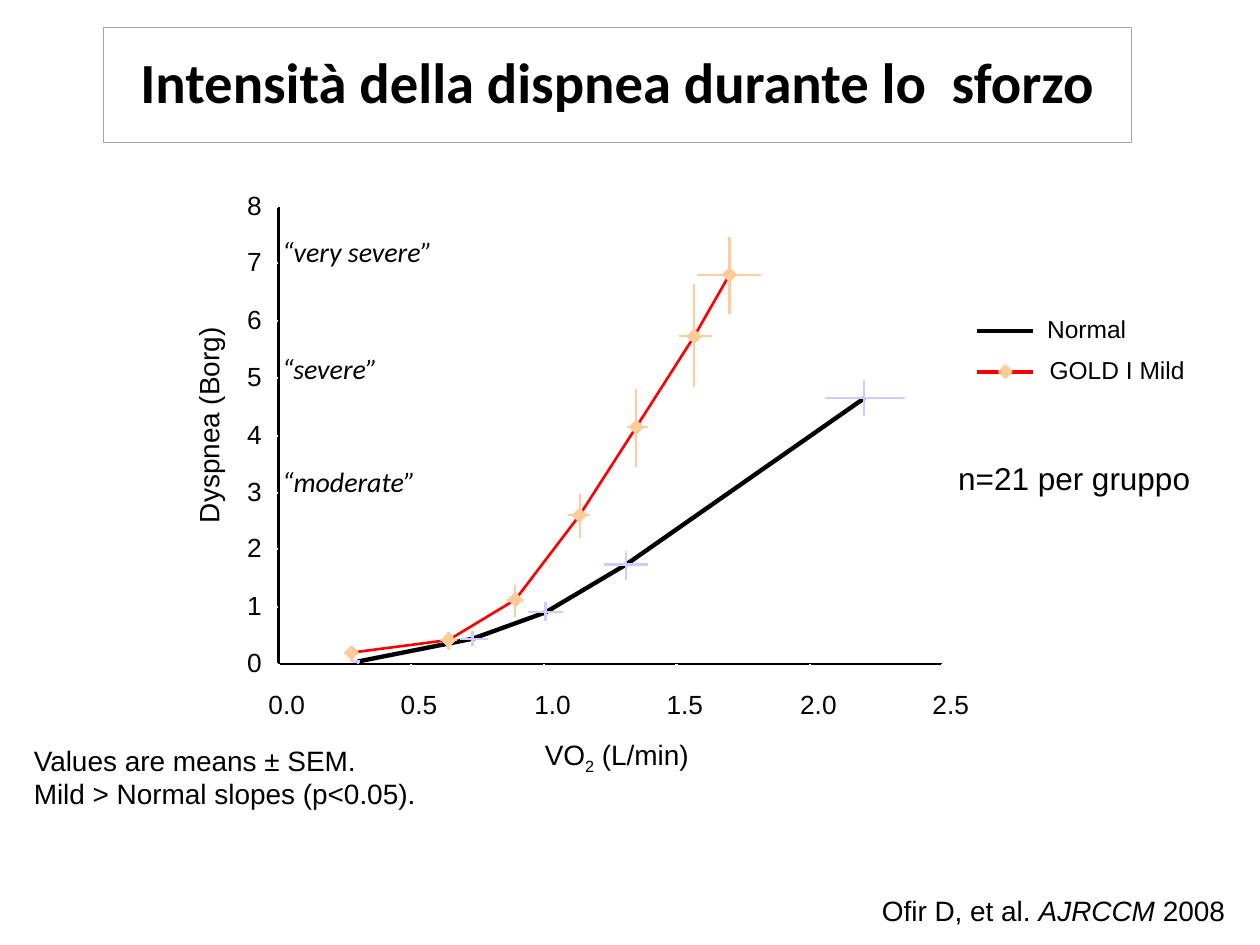
from lxml.etree import SubElement
from pptx import Presentation
from pptx.dml.color import RGBColor
from pptx.enum.shapes import MSO_CONNECTOR, MSO_SHAPE
from pptx.enum.text import MSO_ANCHOR, MSO_AUTO_SIZE, PP_ALIGN
from pptx.oxml.ns import qn
from pptx.util import Pt

PX = 9144  # EMU
BLACK = RGBColor(0x00, 0x00, 0x00)
WHITE = RGBColor(0xFF, 0xFF, 0xFF)
GREY = RGBColor(0xA6, 0xA6, 0xA6)
RED = RGBColor(0xFF, 0x00, 0x00)
PEACH = RGBColor(0xFF, 0xCC, 0x99)
LILAC = RGBColor(0xCC, 0xCC, 0xFF)

X0, Y0, X_END, Y_END = 221, 527, 748, 164
X_STEP, Y_STEP = (X_END - X0) / 5, (Y0 - Y_END) / 8

# x, y and the arms of the error bars: right, left, up, down
NORMAL = [
    (284, 525, 2, 4, 0, 2),
    (375, 507, 12, 10, 6, 6),
    (433, 486, 14, 14, 8, 7),
    (497, 448, 17, 18, 11, 12),
    (686, 316, 32, 31, 14, 14),
]
MILD = [
    (279, 518, 3, 6, 5, 7),
    (356, 508, 7, 7, 6, 8),
    (409, 476, 7, 7, 12, 14),
    (460, 409, 8, 9, 17, 18),
    (505, 339, 9, 7, 30, 32),
    (551, 267, 14, 12, 42, 40),
    (579, 218, 25, 26, 30, 31),
]


def add_run(p, text, font="Arial", size=16, color=BLACK, bold=False, italic=False, baseline=0):
    """Append a formatted run to a paragraph."""
    r = p.add_run()
    r.text = text
    f = r.font
    f.name, f.size, f.bold, f.italic = font, Pt(size), bold, italic
    f.color.rgb = color
    if baseline:
        r._r.get_or_add_rPr().set("baseline", str(baseline * 1000))


class Drawing:
    """Holds the line style and the current slide, and draws each kind of element."""

    def __init__(self, s, width=1.25):
        self.s = s
        self.width = width

    def title(self, text, x, y, w, h):
        sp = self.s.shapes.title
        sp.left, sp.top, sp.width, sp.height = (v * PX for v in (x, y, w, h))
        sp.line.color.rgb, sp.line.width = GREY, Pt(0.75)
        tf = sp.text_frame
        tf.auto_size, tf.vertical_anchor = MSO_AUTO_SIZE.NONE, MSO_ANCHOR.MIDDLE
        p = tf.paragraphs[0]
        p.alignment, p.line_spacing = PP_ALIGN.CENTER, 0.9
        add_run(p, text, font="Calibri", size=32.4, bold=True)

    def text(self, x, y, w, h, *paragraphs, align=PP_ALIGN.LEFT, rotation=0, tight=False, **fmt):
        sp = self.s.shapes.add_textbox(x * PX, y * PX, w * PX, h * PX)
        sp.rotation = rotation
        tf = sp.text_frame
        tf.word_wrap = not tight
        tf.auto_size = MSO_AUTO_SIZE.SHAPE_TO_FIT_TEXT
        if tight:
            tf.margin_left = tf.margin_right = tf.margin_top = tf.margin_bottom = 0
        for i, runs in enumerate(paragraphs):
            p = tf.add_paragraph() if i else tf.paragraphs[0]
            p.alignment = align
            for text, extra in [(runs, {})] if isinstance(runs, str) else runs:
                add_run(p, text, **{**fmt, **extra})

    def label(self, x, y, w, h, *paragraphs, align=PP_ALIGN.CENTER, **fmt):
        self.text(x, y, w, h, *paragraphs, align=align, tight=True, **fmt)

    def line(self, x1, y1, x2, y2, color, width=None):
        c = self.s.shapes.add_connector(MSO_CONNECTOR.STRAIGHT, x1 * PX, y1 * PX, x2 * PX, y2 * PX)
        c.line.color.rgb, c.line.width = color, Pt(width or self.width)
        SubElement(c._element.spPr, qn("a:effectLst"))

    def polyline(self, points, color, width):
        fb = self.s.shapes.build_freeform(*points[0], scale=PX)
        fb.add_line_segments(points[1:], close=False)
        sp = fb.convert_to_shape()
        sp.shadow.inherit = False
        sp.fill.background()
        sp.line.color.rgb, sp.line.width = color, Pt(width)

    def marker(self, x, y, color, r=5):
        sp = self.s.shapes.add_shape(
            MSO_SHAPE.DIAMOND, (x - r) * PX, (y - r) * PX, 2 * r * PX, 2 * r * PX)
        sp.shadow.inherit = False
        sp.fill.solid()
        sp.fill.fore_color.rgb = sp.line.color.rgb = color
        sp.line.width = Pt(self.width)

    def series(self, data, color, width, bar_color, markers=False):
        self.polyline([row[:2] for row in data], color, width)
        for x, y, right, left, up, down in data:
            for dx, dy in ((right, 0), (-left, 0), (0, -up), (0, down)):
                if dx or dy:
                    self.line(x, y, x + dx, y + dy, bar_color)
        if markers:
            for x, y, *_ in data:
                self.marker(x, y, bar_color)

    def axes(self):
        self.line(X0, Y_END, X0, Y0, BLACK)
        for i in range(9):
            y = round(Y0 - i * Y_STEP)
            self.line(X0 - 7, y, X0, y, WHITE)
            self.label(196, y - 14, 12, 25, str(i), size=15)
        self.line(X0, Y0, X_END, Y0, BLACK)
        for i in range(6):
            x = round(X0 + i * X_STEP)
            self.line(x, Y0 + 7, x, Y0, WHITE)
            self.label(x - 8, 546, 29, 25, f"{i / 2:.1f}", size=15)


def main():
    prs = Presentation()
    prs.slide_width, prs.slide_height = 1000 * PX, 750 * PX
    d = Drawing(prs.slides.add_slide(prs.slide_layouts[5]))

    d.title("Intensità della dispnea durante lo  sforzo", 82, 22, 816, 91)
    d.text(17, 585, 356, 64, "Values are means ± SEM.", "Mild > Normal slopes (p<0.05).")
    for y, grade in ((181, "“very severe”"), (274, "“severe”"), (364, "“moderate”")):
        d.text(214, y, 159, 37, grade, font="Calibri", italic=True)

    d.axes()
    d.series(NORMAL, BLACK, 2.5, LILAC)
    d.series(MILD, RED, 1.5, PEACH, markers=True)
    d.label(429, 585, 121, 27, [("VO", {}), ("2", {"baseline": -25}), (" (L/min)", {})])
    d.label(87, 324, 157, 27, "Dyspnea (Borg)", rotation=270)

    d.line(775, 263, 820, 263, BLACK, 2.38)
    d.label(831, 249, 63, 24, "Normal", size=14)
    d.line(775, 295, 820, 295, RED, 2.38)
    d.marker(798, 295, PEACH)
    d.label(833, 282, 108, 24, "GOLD I Mild", size=14, align=PP_ALIGN.LEFT)

    d.text(747, 359, 211, 40, "n=21 per gruppo", size=18, align=PP_ALIGN.CENTER)
    d.text(444, 704, 538, 37,
           [("Ofir D, et al. ", {}), ("AJRCCM", {"italic": True}), (" 2008", {})],
           align=PP_ALIGN.RIGHT)
    prs.save("out.pptx")


if __name__ == "__main__":
    main()
